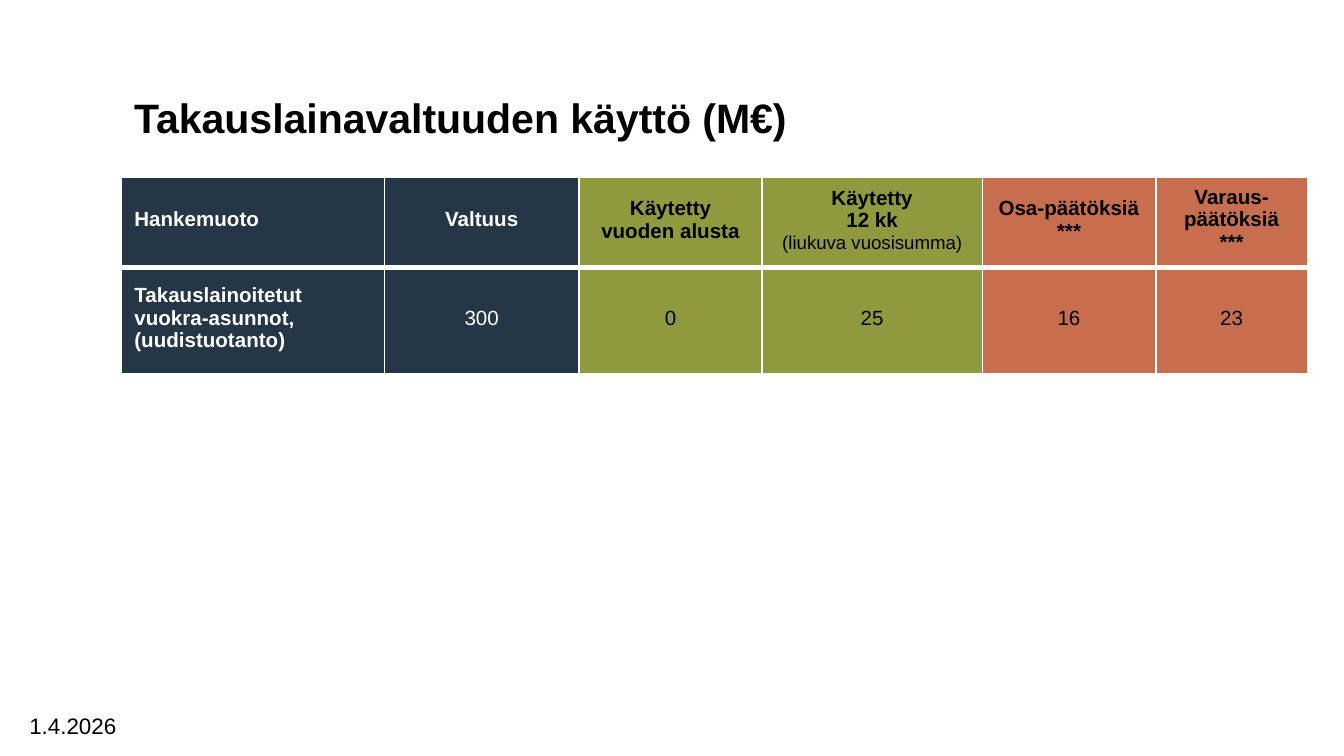
from pptx import Presentation
from pptx.dml.color import RGBColor
from pptx.enum.text import MSO_ANCHOR, PP_ALIGN
from pptx.oxml import parse_xml
from pptx.oxml.ns import nsdecls
from pptx.util import Pt

LEFT, CENTER = PP_ALIGN.LEFT, PP_ALIGN.CENTER
TOP, MIDDLE = MSO_ANCHOR.TOP, MSO_ANCHOR.MIDDLE

BLACK = RGBColor(0x00, 0x00, 0x00)
WHITE = RGBColor(0xFF, 0xFF, 0xFF)
NAVY = RGBColor(0x25, 0x37, 0x46)
OLIVE = RGBColor(0x8F, 0x99, 0x3E)
RUST = RGBColor(0xC6, 0x6E, 0x4E)

FONT = "Arial"
NOTE = "(liukuva vuosisumma)"
COLUMNS = [
    (141.1, NAVY, WHITE, ["Hankemuoto"],
     "Takauslainoitetut vuokra-asunnot, (uudistuotanto)"),
    (104.4, NAVY, WHITE, ["Valtuus"], "300"),
    (97.9, OLIVE, BLACK, ["Käytetty vuoden alusta"], "0"),
    (118.1, OLIVE, BLACK, ["Käytetty\v12 kk", NOTE], "25"),
    (92.9, RUST, BLACK, ["Osa-päätöksiä", "***"], "16"),
    (81.4, RUST, BLACK, ["Varaus-päätöksiä", "***"], "23"),
]
ROW_HEIGHTS = [45.3, 56.9]


def write_paragraph(paragraph, text, size=11, color=BLACK, bold=False, align=LEFT):
    paragraph.text = text
    paragraph.alignment = align
    for run in paragraph.runs:
        run.font.name = FONT
        run.font.size = Pt(size)
        run.font.bold = bold
        run.font.color.rgb = color


def add_label(slide, text, left, top, width, height, anchor=TOP, **text_format):
    label = slide.shapes.add_textbox(Pt(left), Pt(top), Pt(width), Pt(height))
    frame = label.text_frame
    frame.word_wrap = True
    frame.vertical_anchor = anchor
    write_paragraph(frame.paragraphs[0], text, **text_format)


def set_borders(cell, **widths):
    properties = cell._tc.get_or_add_tcPr()
    for index, (side, width) in enumerate(widths.items()):
        border = parse_xml(
            f'<a:ln{side} {nsdecls("a")} w="{Pt(width)}"><a:solidFill>'
            f'<a:srgbClr val="{WHITE}"/></a:solidFill></a:ln{side}>')
        properties.insert(index, border)


def fill_cell(cell, lines, fill, color, bold, align):
    cell.vertical_anchor = MIDDLE
    cell.margin_left = cell.margin_right = Pt(7.2)
    cell.margin_top, cell.margin_bottom = Pt(2.9), Pt(5.8)
    cell.fill.solid()
    cell.fill.fore_color.rgb = fill
    frame = cell.text_frame
    for index, line in enumerate(lines):
        paragraph = frame.add_paragraph() if index else frame.paragraphs[0]
        is_note = line == NOTE
        write_paragraph(paragraph, line, size=10 if is_note else 11, color=color,
                        bold=bold and not is_note, align=align)


def add_usage_table(slide, left, top):
    width = sum(column[0] for column in COLUMNS)
    table = slide.shapes.add_table(len(ROW_HEIGHTS), len(COLUMNS), Pt(left), Pt(top),
                                   Pt(width), Pt(sum(ROW_HEIGHTS))).table
    for row, height in zip(table.rows, ROW_HEIGHTS):
        row.height = Pt(height)
    for index, (width, fill, color, heading, value) in enumerate(COLUMNS):
        table.columns[index].width = Pt(width)
        is_first = index == 0
        align = LEFT if is_first else CENTER
        header, body = table.cell(0, index), table.cell(1, index)
        fill_cell(header, heading, fill, color, True, align)
        fill_cell(body, [value], fill, color, is_first, align)
        set_borders(header, L=1, R=1, T=1, B=3)
        set_borders(body, L=1, R=1, T=3, B=1)


def main():
    presentation = Presentation()
    presentation.slide_width, presentation.slide_height = Pt(720), Pt(405)
    slide = presentation.slides.add_slide(presentation.slide_layouts[6])
    add_label(slide, "Takauslainavaltuuden käyttö (M€)", 64.8, 49, 493.9, 27.4,
              anchor=MIDDLE, size=22, bold=True)
    add_usage_table(slide, 64.8, 95)
    add_label(slide, "1.4.2026", 8.6, 378, 126, 18, size=12)
    presentation.save("out.pptx")


if __name__ == "__main__":
    main()
